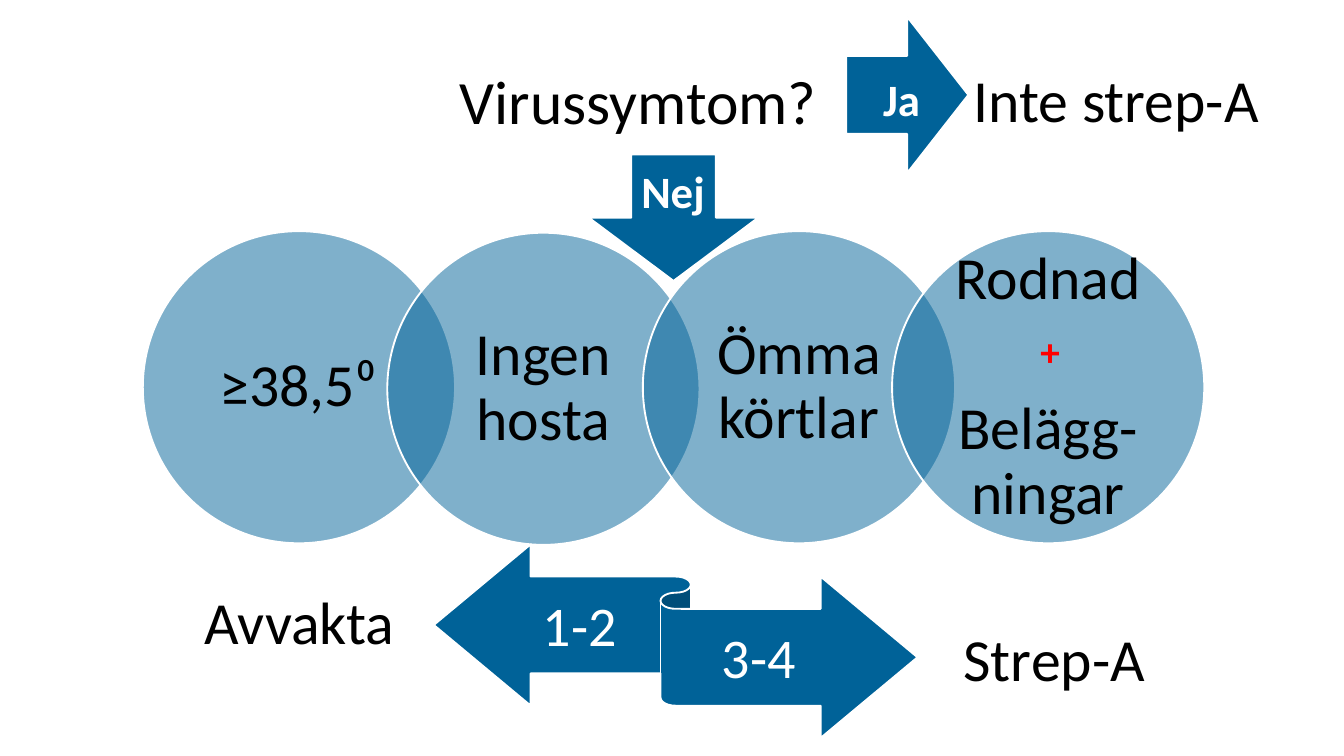
from lxml.etree import SubElement
from pptx import Presentation
from pptx.dml.color import RGBColor
from pptx.enum.shapes import MSO_SHAPE
from pptx.enum.text import MSO_ANCHOR, PP_ALIGN
from pptx.oxml.ns import qn
from pptx.util import Cm, Pt

COLOURS = {"blue": "006298", "white": "FFFFFF", "black": "000000", "red": "FF0000"}
FONT = "Calibri"
CIRCLE_SIZE = 5.9
CIRCLES = [
    (2.7, 4.37, ["≥38,5⁰"]),
    (7.32, 4.4, ["Ingen hosta"]),
    (12.15, 4.37, ["Ömma körtlar"]),
    (16.86, 4.37, ["Rodnad", "Belägg-ningar"]),
]


def colour(name):
    return RGBColor.from_string(COLOURS[name])


def write(shape, lines, size, name, bold=False, align=PP_ALIGN.LEFT, spacing=1.0, gap=0):
    """Fill a shape with paragraphs that are separated by gap points."""
    frame = shape.text_frame
    frame.text = "\n".join(lines)
    for index, para in enumerate(frame.paragraphs):
        para.alignment = align
        para.line_spacing = spacing
        if index < len(lines) - 1:
            para.space_after = Pt(gap)
        for span in para.runs:
            span.font.name = FONT
            span.font.size = Pt(size)
            span.font.bold = bold
            span.font.color.rgb = colour(name)


def set_margins(frame, horizontal, vertical):
    frame.margin_left = frame.margin_right = Cm(horizontal)
    frame.margin_top = frame.margin_bottom = Cm(vertical)


def add_blue_shape(page, kind, left, top, width, height):
    shape = page.shapes.add_shape(kind, Cm(left), Cm(top), Cm(width), Cm(height))
    shape.shadow.inherit = False
    shape.fill.solid()
    shape.fill.fore_color.rgb = colour("blue")
    shape.line.color.rgb = colour("white")
    shape.line.width = Pt(1)
    return shape


def add_circle(page, left, top, lines):
    """Add a half-transparent circle with centred text."""
    circle = add_blue_shape(page, MSO_SHAPE.OVAL, left, top, CIRCLE_SIZE, CIRCLE_SIZE)
    fill_colour = circle.fill._xPr.find(qn("a:solidFill"))[0]
    SubElement(fill_colour, qn("a:alpha"), val="50000")
    frame = circle.text_frame
    frame.word_wrap = True
    frame.vertical_anchor = MSO_ANCHOR.MIDDLE
    set_margins(frame, 0.33, 0.1)
    write(circle, lines, 32, "black", align=PP_ALIGN.CENTER, spacing=0.9, gap=46)


def add_label(page, text, left, top, width, height, size, name="black",
              bold=False, centred=False):
    """Add a one-line text box, centred both ways or set from its top left corner."""
    box = page.shapes.add_textbox(Cm(left), Cm(top), Cm(width), Cm(height))
    frame = box.text_frame
    frame.word_wrap = True
    frame.vertical_anchor = MSO_ANCHOR.MIDDLE if centred else MSO_ANCHOR.TOP
    set_margins(frame, 0, 0)
    write(box, [text], size, name, bold,
          PP_ALIGN.CENTER if centred else PP_ALIGN.LEFT, 0.9 if centred else 1.0)


def main():
    deck = Presentation()
    deck.slide_width, deck.slide_height = Cm(25.4), Cm(14.29)
    page = deck.slides.add_slide(deck.slide_layouts[6])

    for left, top, lines in CIRCLES:
        add_circle(page, left, top, lines)
    add_label(page, "+", 19.4, 6.12, 0.89, 1.14, 21, "red", bold=True, centred=True)

    add_blue_shape(page, MSO_SHAPE.LEFT_RIGHT_RIBBON, 8.2, 10.29, 9.14, 3.66)
    add_label(page, "1-2", 9.45, 10.97, 3.02, 1.8, 30, "white", centred=True)
    add_label(page, "3-4", 12.55, 11.58, 3.58, 1.8, 30, "white", centred=True)
    add_label(page, "Avvakta", 3.86, 11.05, 4.5, 1.65, 32)
    add_label(page, "Strep-A", 18.21, 11.76, 6.98, 2.5, 32)

    yes_arrow = add_blue_shape(page, MSO_SHAPE.UP_ARROW, 15.67, 0.64, 2.95, 2.31)
    yes_arrow.rotation = 90
    add_blue_shape(page, MSO_SHAPE.DOWN_ARROW, 11.13, 2.92, 3.2, 2.39)
    add_label(page, "Virussymtom?", 8.69, 1.19, 6.78, 1.65, 33)
    add_label(page, "Inte strep-A", 18.4, 1.19, 6.4, 1.65, 32)
    add_label(page, "Ja", 16.69, 1.35, 1.7, 1.73, 24, "white", bold=True)
    add_label(page, "Nej", 12.12, 3.1, 1.78, 1.65, 24, "white", bold=True)

    deck.save("out.pptx")


if __name__ == "__main__":
    main()
